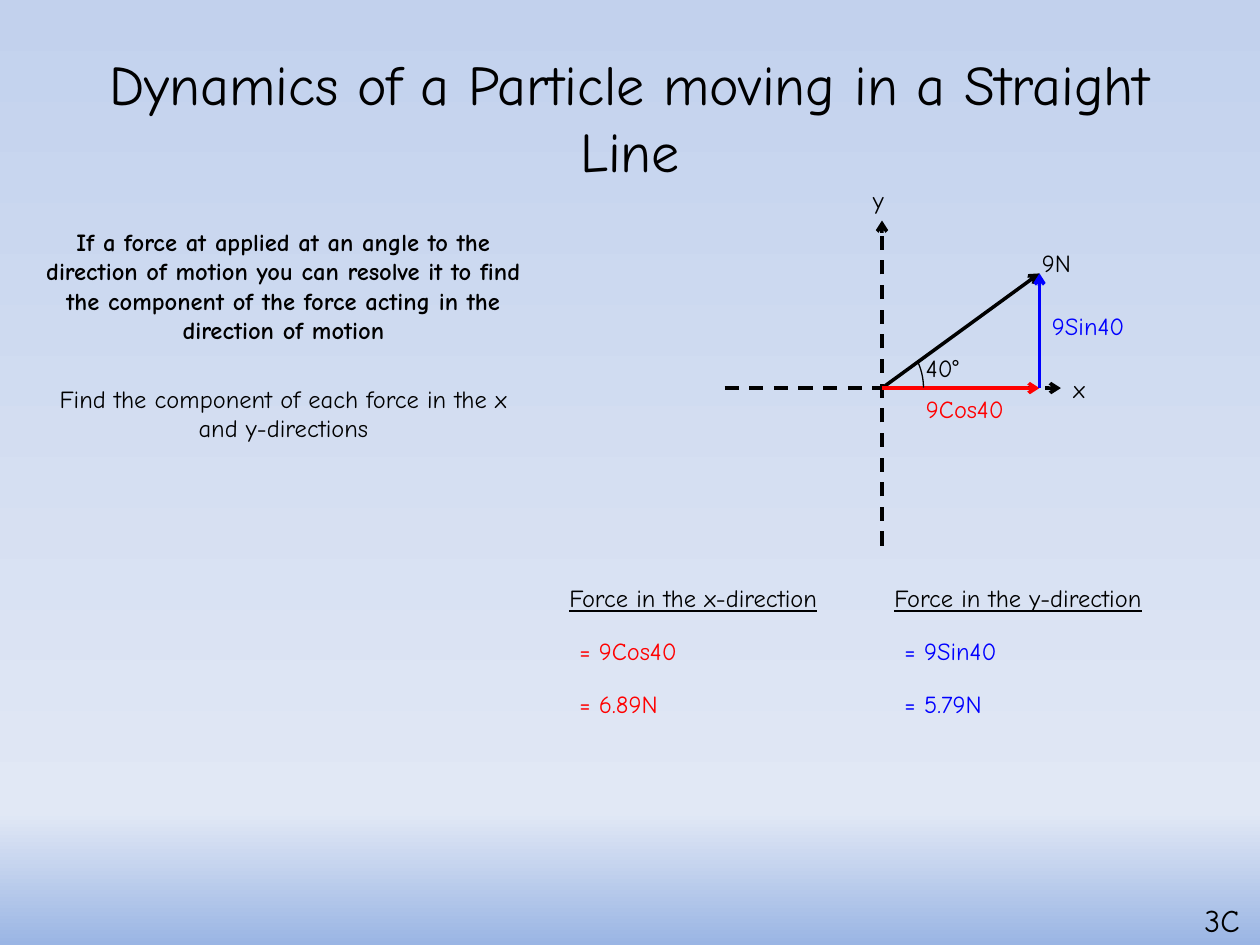
import copy
import pptx
import pptx.util
import pptx.dml.color
import pptx.enum.dml
import pptx.enum.shapes
import pptx.enum.text
import pptx.oxml
import pptx.oxml.ns

Inches, Pt = pptx.util.Inches, pptx.util.Pt
ALIGN = pptx.enum.text.PP_ALIGN
FONT = "Comic Neue"
BLACK, RED, BLUE = "000000", "FF0000", "0000FF"

# Content
TITLE = "Dynamics of a Particle moving in a Straight Line"
RULE = ("If a force at applied at an angle to the direction of motion you can resolve it "
        "to find the component of the force acting in the direction of motion")
TASK = "Find the component of each force in the x and y-directions"
BACKGROUND = [(0, "C2D1ED"), (0.86, "E1E8F5"), (1, "9AB5E4")]

ORIGIN, TIP = (7, 3.08), (8.25, 2.17)
CORNER = (TIP[0], ORIGIN[1])
ARROWS = [  # start, end, colour, dashed
    ((ORIGIN[0], 4.33), (ORIGIN[0], 1.75), BLACK, True),
    ((5.75, ORIGIN[1]), (8.42, ORIGIN[1]), BLACK, True),
    (ORIGIN, TIP, BLACK, False),
    (ORIGIN, CORNER, RED, False),
    (CORNER, TIP, BLUE, False),
]
LABELS = [  # text, left, top, width, colour
    ("9N", 8.17, 1.92, 0.48, BLACK),
    ("x", 8.42, 2.92, 0.32, BLACK),
    ("y", 6.83, 1.42, 0.33, BLACK),
    ("40°", 7.25, 2.75, 0.52, BLACK),
    ("9Cos40", 7.25, 3.08, 0.88, RED),
    ("9Sin40", 8.25, 2.42, 0.85, BLUE),
]
RESULTS = [  # left, heading, colour, (working, width)
    (4.42, "Force in the x-direction", RED, [("= 9Cos40", 1.03), ("= 6.89N", 0.92)]),
    (7, "Force in the y-direction", BLUE, [("= 9Sin40", 1.01), ("= 5.79N", 0.92)]),
]
RESULT_TOP, RESULT_STEP, RESULT_INDENT = 4.58, 0.42, 0.08
ARC_START, ARC_END = 336.6, 359.6  # degrees clockwise from the x-axis


def rgb(value):
    return pptx.dml.color.RGBColor.from_string(value)


def write(p, text, size=14, color=BLACK, bold=False, underline=False, align=None, before=0):
    p.alignment = align
    p.space_before = Pt(before)
    r = p.add_run()
    r.text = text
    f = r.font
    f.name, f.size, f.bold = FONT, Pt(size), bold
    f.underline = underline
    f.color.rgb = rgb(color)


def add_label(s, text, left, top, width, height=0.34, **style):
    sp = s.shapes.add_textbox(Inches(left), Inches(top), Inches(width), Inches(height))
    tf = sp.text_frame
    tf.word_wrap = False
    tf.auto_size = pptx.enum.text.MSO_AUTO_SIZE.SHAPE_TO_FIT_TEXT
    write(tf.paragraphs[0], text, **style)


def add_arrow(s, start, end, color, dashed):
    ends = [Inches(v) for v in (*start, *end)]
    sp = s.shapes.add_connector(pptx.enum.shapes.MSO_CONNECTOR.STRAIGHT, *ends)
    sp.line.color.rgb = rgb(color)
    sp.line.width = Pt(2)
    if dashed:
        sp.line.dash_style = pptx.enum.dml.MSO_LINE.DASH
    ns = pptx.oxml.ns.nsdecls("a")
    sp.line._get_or_add_ln().append(pptx.oxml.parse_xml(f'<a:tailEnd {ns} type="arrow"/>'))
    sp._element.spPr.append(pptx.oxml.parse_xml(f"<a:effectLst {ns}/>"))


def set_background(s):
    fill = s.background.fill
    fill.gradient()
    fill.gradient_angle = 270
    stops = next(s.element.iter(pptx.oxml.ns.qn("a:gsLst")))
    stops.append(copy.deepcopy(stops[-1]))
    for stop, (position, color) in zip(fill.gradient_stops, BACKGROUND):
        stop.position = position
        stop.color.rgb = rgb(color)


def main():
    prs = pptx.Presentation()
    prs.slide_width, prs.slide_height = Inches(10), Inches(7.5)
    s = prs.slides.add_slide(prs.slide_layouts[5])
    set_background(s)

    # Title
    sp = s.shapes.title
    sp.left, sp.top, sp.width, sp.height = (Inches(v) for v in (0.5, 0.3, 9, 1.25))
    tf = sp.text_frame
    tf.vertical_anchor = pptx.enum.text.MSO_ANCHOR.MIDDLE
    write(tf.paragraphs[0], TITLE, size=32, align=ALIGN.CENTER)

    # Explanation and task
    sp = s.shapes.add_textbox(Inches(0.25), Inches(1.75), Inches(4), Inches(4.95))
    tf = sp.text_frame
    tf.word_wrap = True
    write(tf.paragraphs[0], RULE, bold=True, align=ALIGN.CENTER)
    write(tf.add_paragraph(), TASK, align=ALIGN.CENTER, before=22.5)

    # Section number
    add_label(s, "3C", 9.46, 7.1, 0.52, 0.4, size=18)

    # Force diagram
    for arrow in ARROWS:
        add_arrow(s, *arrow)
    sp = s.shapes.add_shape(pptx.enum.shapes.MSO_SHAPE.ARC,
                            Inches(6.33), Inches(2.58), Inches(1), Inches(1))
    sp.shadow.inherit = False
    sp.fill.background()
    sp.line.color.rgb = rgb(BLACK)
    sp.line.width = Pt(0.75)
    for i, angle in enumerate((ARC_START, ARC_END)):
        sp.adjustments[i] = angle * 0.6  # 60000ths of a degree, scaled by 100000
    for text, left, top, width, color in LABELS:
        add_label(s, text, left, top, width, color=color)

    # Resolved components
    for left, heading, color, working in RESULTS:
        add_label(s, heading, left, RESULT_TOP, 2.4, underline=True)
        for i, (text, width) in enumerate(working, 1):
            add_label(s, text, left + RESULT_INDENT, RESULT_TOP + i * RESULT_STEP, width,
                      color=color)

    prs.save("out.pptx")


if __name__ == "__main__":
    main()
